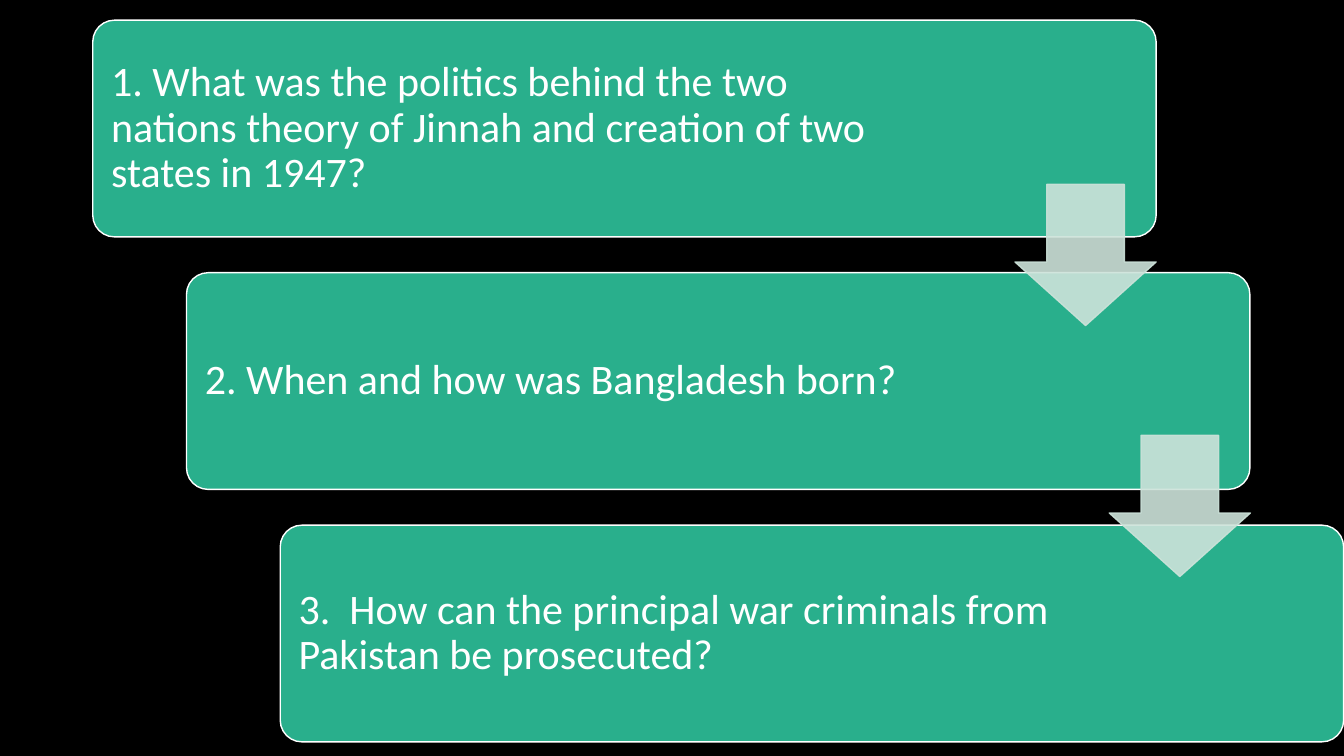
"""Build a slide of three cascading question boxes linked by down arrows."""
from dataclasses import dataclass

from lxml import etree
from pptx import Presentation
from pptx.dml.color import RGBColor
from pptx.enum.shapes import MSO_SHAPE
from pptx.enum.text import MSO_ANCHOR, PP_ALIGN
from pptx.oxml.ns import qn
from pptx.util import Pt

ROUND_RECT = MSO_SHAPE.ROUNDED_RECTANGLE
DOWN_ARROW = MSO_SHAPE.DOWN_ARROW
MIDDLE = MSO_ANCHOR.MIDDLE
LEFT = PP_ALIGN.LEFT

COLORS = {"bg": "000000", "box": "29AF8C", "text": "FFFFFF", "arrow": "CDE3DA"}
FONT = "Calibri"
FONT_SIZE = 30
INSET = 8.64
RIGHT_INSET = 176
ARROW_OPACITY = 90

QUESTIONS = [
    "1. What was the politics behind the two nations theory of Jinnah and creation of two states in 1947?",
    "2. When and how was Bangladesh born?",
    "3.  How can the principal war criminals from Pakistan be prosecuted?",
]


@dataclass(frozen=True)
class Cascade:
    """Size, first position, step and look of a repeated shape, in points."""
    kind: int
    left: float
    top: float
    width: float
    height: float
    step_x: float
    step_y: float
    adjustments: tuple[float, ...]
    fill: str
    line: str


BOX = Cascade(ROUND_RECT, 66.24, 14.4, 759.6, 154.8, 66.96, 180.36, (0.1,),
              COLORS["box"], COLORS["text"])
ARROW = Cascade(DOWN_ARROW, 725.04, 131.76, 100.8, 100.8, 67.32, 179.28,
                (0.55, 0.45), COLORS["arrow"], COLORS["arrow"])


def add_step(slide, c: Cascade, i: int):
    """Add the i-th shape of a cascade and return it."""
    sp = slide.shapes.add_shape(c.kind, Pt(c.left + i * c.step_x),
                                Pt(c.top + i * c.step_y), Pt(c.width), Pt(c.height))
    for n, value in enumerate(c.adjustments):
        sp.adjustments[n] = value
    sp.shadow.inherit = False
    sp.fill.solid()
    sp.fill.fore_color.rgb = RGBColor.from_string(c.fill)
    sp.line.color.rgb = RGBColor.from_string(c.line)
    sp.line.width = Pt(1)
    return sp


def set_opacity(sp, percent: int) -> None:
    """Make the fill and line of a shape partly transparent."""
    for color in sp.element.spPr.iter(qn("a:srgbClr")):
        etree.SubElement(color, qn("a:alpha")).set("val", str(percent * 1000))


def set_question(sp, text: str) -> None:
    """Write a question into its box, clear of the arrows on the right."""
    tf = sp.text_frame
    tf.text = text
    tf.word_wrap = True
    tf.vertical_anchor = MIDDLE
    tf.margin_left = tf.margin_top = tf.margin_bottom = Pt(INSET)
    tf.margin_right = Pt(RIGHT_INSET)
    p = tf.paragraphs[0]
    p.alignment = LEFT
    p.line_spacing = 0.9
    for r in p.runs:
        r.font.name = FONT
        r.font.size = Pt(FONT_SIZE)
        r.font.color.rgb = RGBColor.from_string(COLORS["text"])


def main() -> None:
    """Build and save the slide."""
    prs = Presentation()
    prs.slide_width, prs.slide_height = Pt(960), Pt(540)
    slide = prs.slides.add_slide(prs.slide_layouts[6])
    bg = slide.background.fill
    bg.solid()
    bg.fore_color.rgb = RGBColor.from_string(COLORS["bg"])
    for i, question in enumerate(QUESTIONS):
        set_question(add_step(slide, BOX, i), question)
    for i in range(len(QUESTIONS) - 1):
        set_opacity(add_step(slide, ARROW, i), ARROW_OPACITY)
    prs.save("out.pptx")


if __name__ == "__main__":
    main()
